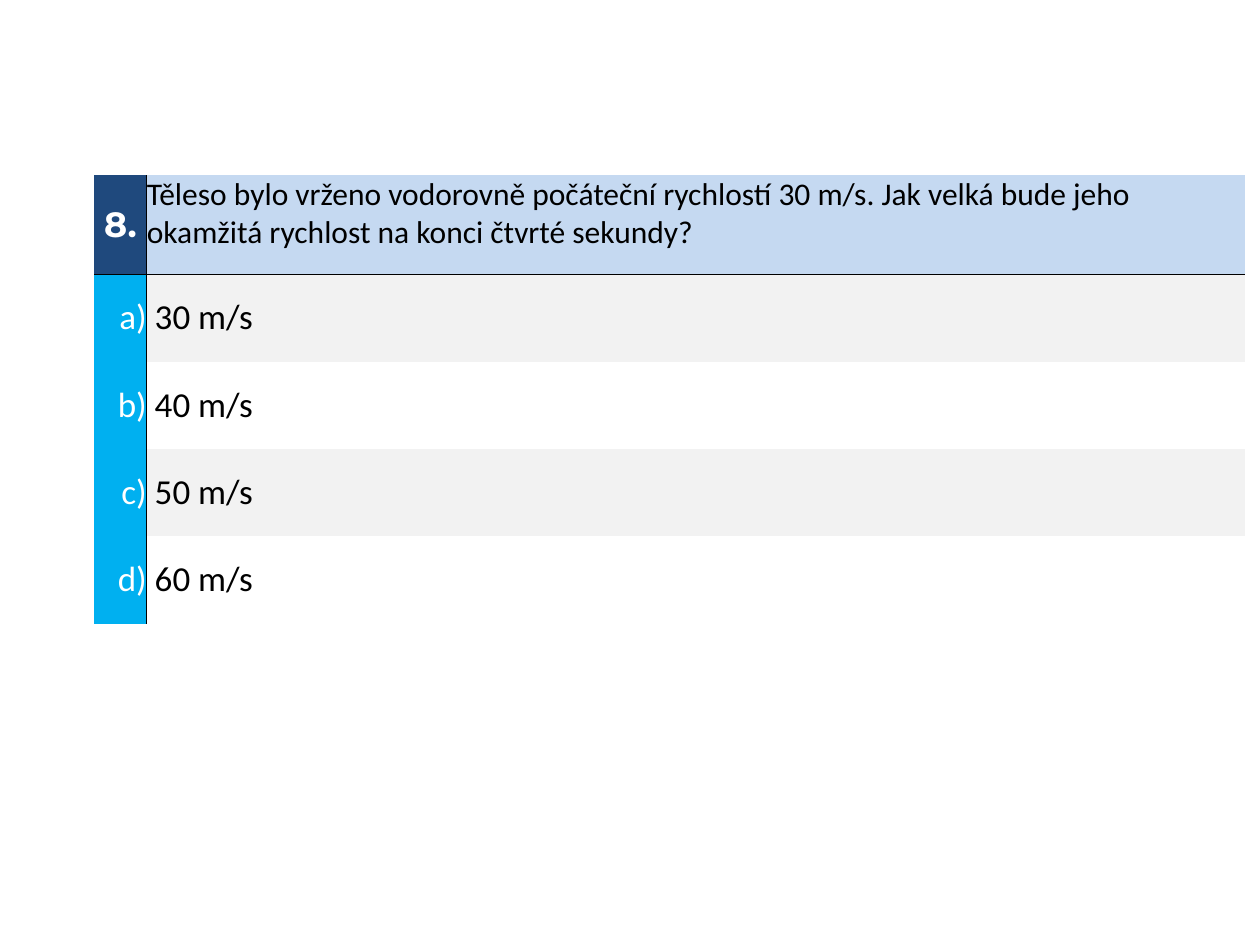
from lxml import etree
from pptx import Presentation
from pptx import util as u
from pptx.dml.color import RGBColor
from pptx.enum import text
from pptx.oxml import ns

COLORS = {
    "navy": "1F497D", "question": "C5D9F1", "letter": "00B0F0",
    "stripe": "F2F2F2", "black": "000000", "white": "FFFFFF",
}
LEFT, CENTER, RIGHT = text.PP_ALIGN.LEFT, text.PP_ALIGN.CENTER, text.PP_ALIGN.RIGHT


class Quiz:
    """Style and current slide."""
    font = "Calibri"
    size = 20
    border = 0.5

    def __init__(self, prs):
        self.s = prs.slides.add_slide(prs.slide_layouts[6])

    def table(self, left, top, cols, rows):
        frame = self.s.shapes.add_table(
            len(rows), len(cols), u.Cm(left), u.Cm(top),
            u.Cm(sum(cols)), u.Cm(sum(rows)))
        tbl = frame.table
        tbl.first_row = tbl.horz_banding = False
        for col, width in zip(tbl.columns, cols):
            col.width = u.Cm(width)
        for row, height in zip(tbl.rows, rows):
            row.height = u.Cm(height)
        return tbl

    def borders(self, cell, sides):
        tc_pr = cell._tc.get_or_add_tcPr()
        for side in "LRTB":
            ln = etree.SubElement(tc_pr, ns.qn(f"a:ln{side}"))
            if side in sides:
                ln.set("w", str(u.Pt(self.border)))
                fill = etree.SubElement(ln, ns.qn("a:solidFill"))
                etree.SubElement(fill, ns.qn("a:srgbClr"), val=COLORS["black"])
            else:
                etree.SubElement(ln, ns.qn("a:noFill"))

    def cell(self, cell, words, fill, color="black", align=LEFT, sides="",
             anchor=text.MSO_ANCHOR.MIDDLE, size=None, font=None, bold=False):
        self.borders(cell, sides)
        if fill:
            cell.fill.solid()
            cell.fill.fore_color.rgb = RGBColor.from_string(COLORS[fill])
        else:
            cell.fill.background()
        cell.margin_left = cell.margin_right = cell.margin_top = cell.margin_bottom = 0
        cell.vertical_anchor = anchor
        p = cell.text_frame.paragraphs[0]
        p.alignment = align
        r = p.add_run()
        r.text = words
        r.font.name = font or self.font
        r.font.size = u.Pt(size or self.size)
        r.font.bold = bold
        r.font.color.rgb = RGBColor.from_string(COLORS[color])


def main():
    prs = Presentation()
    prs.slide_width, prs.slide_height = u.Cm(25.4), u.Cm(19.05)
    quiz = Quiz(prs)

    answers = [" 30 m/s", " 40 m/s", " 50 m/s", " 60 m/s"]
    tbl = quiz.table(1.9, 3.53, [1.06, 22.14], [2] + [1.76] * len(answers))

    # Question row
    quiz.cell(tbl.cell(0, 0), "8.", "navy", "white", CENTER, "RB",
              font="Montserrat", bold=True)
    quiz.cell(tbl.cell(0, 1),
              "Těleso bylo vrženo vodorovně počáteční rychlostí 30 m/s. "
              "Jak velká bude jeho okamžitá rychlost na konci čtvrté sekundy?",
              "question", sides="LB", anchor=text.MSO_ANCHOR.TOP, size=18)

    # Answer rows, every other one striped
    for i, (letter, answer) in enumerate(zip("abcd", answers), start=1):
        top = "T" if i == 1 else ""
        quiz.cell(tbl.cell(i, 0), f"{letter})", "letter", "white", RIGHT, "R" + top)
        quiz.cell(tbl.cell(i, 1), answer, "stripe" if i % 2 else None, sides="L" + top)

    prs.save("out.pptx")


if __name__ == "__main__":
    main()
